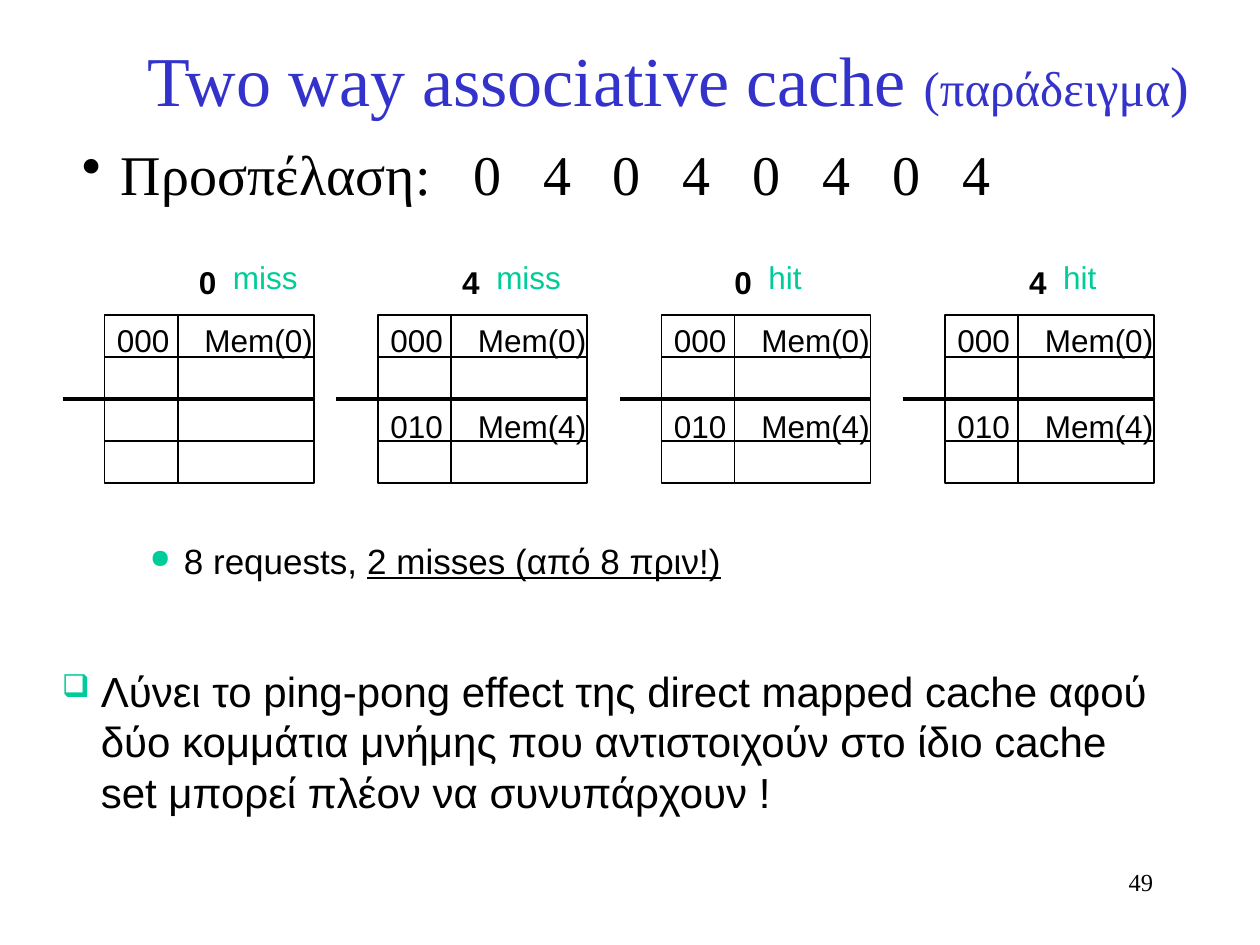
from dataclasses import dataclass
from typing import Optional

from lxml.etree import SubElement
from pptx import Presentation
from pptx.dml.color import RGBColor
from pptx.enum.shapes import MSO_CONNECTOR as CONN, MSO_SHAPE as SHAPE
from pptx.enum.text import MSO_ANCHOR as ANCHOR, MSO_AUTO_SIZE as FIT, PP_ALIGN as ALIGN
from pptx.oxml.ns import qn
from pptx.util import Inches, Pt

BLACK = RGBColor(0x00, 0x00, 0x00)
BLUE = RGBColor(0x33, 0x33, 0xCC)
GREEN = RGBColor(0x00, 0xCC, 0x99)
SERIF, SANS = "Times New Roman", "Arial"

TABLE_TOP, ROW_H, ROWS = 2.5, 1 / 3, 4
TAG_W, DATA_W, OVERHANG = 0.58, 1.08, 0.33
LABEL_H = 0.4


@dataclass
class Run:
    text: str
    size: float
    font: str = SANS
    color: RGBColor = BLACK
    bold: bool = False
    underline: bool = False
    spacing: int = 0


@dataclass
class Bullet:
    char: str
    margin: float
    hang: float
    before: int
    level: int = 0
    color: Optional[RGBColor] = None


@dataclass
class Access:
    left: float
    label_left: float
    address: str
    outcome: str
    outcome_w: float
    second_set: bool = True


ACCESSES = [
    Access(0.83, 1.48, "0", "miss", 0.72, second_set=False),
    Access(3, 3.57, "4", "miss", 0.72),
    Access(5.25, 5.73, "0", "hit", 0.47),
    Access(7.5, 8.07, "4", "hit", 0.47),
]


def add_text(s, left: float, top: float, width: float, height: float,
             runs: list[Run], wrap: bool = False, align=None):
    sp = s.shapes.add_textbox(Inches(left), Inches(top), Inches(width), Inches(height))
    tf = sp.text_frame
    tf.word_wrap = wrap
    tf.auto_size = FIT.SHAPE_TO_FIT_TEXT
    p = tf.paragraphs[0]
    p.alignment = align
    for run in runs:
        r = p.add_run()
        r.text = run.text
        r.font.size = Pt(run.size)
        r.font.name = run.font
        r.font.color.rgb = run.color
        r.font.bold = run.bold
        r.font.underline = run.underline
        if run.spacing:
            r.font._element.set("spc", str(run.spacing * 100))
    return tf


def add_bullet(s, left: float, top: float, height: float,
               runs: list[Run], bullet: Bullet) -> None:
    tf = add_text(s, left, top, 8.92, height, runs, wrap=True)
    tf.margin_left = tf.margin_right = Inches(0.07)
    tf.margin_top = tf.margin_bottom = Inches(0.03)
    p = tf.paragraphs[0]
    p.level = bullet.level
    pPr = p._p.get_or_add_pPr()
    pPr.set("marL", str(Inches(bullet.margin)))
    pPr.set("indent", str(-Inches(bullet.hang)))
    before = SubElement(pPr, qn("a:spcBef"))
    SubElement(before, qn("a:spcPct"), val=str(bullet.before * 1000))
    if bullet.color is not None:
        color = SubElement(pPr, qn("a:buClr"))
        SubElement(color, qn("a:srgbClr"), val=str(bullet.color))
        SubElement(pPr, qn("a:buSzPct"), val="75000")
    SubElement(pPr, qn("a:buChar"), char=bullet.char)


def add_line(s, x1: float, x2: float, y: float, weight: float = 1):
    line = s.shapes.add_connector(CONN.STRAIGHT, Inches(x1), Inches(y), Inches(x2), Inches(y))
    line.line.color.rgb = BLACK
    line.line.width = Pt(weight)
    SubElement(line._element.spPr, qn("a:effectLst"))
    return line


def add_column(s, left: float, width: float):
    sp = s.shapes.add_shape(SHAPE.RECTANGLE, Inches(left), Inches(TABLE_TOP),
                            Inches(width), Inches(ROWS * ROW_H))
    sp.shadow.inherit = False
    sp.fill.background()
    sp.line.color.rgb = BLACK
    sp.line.width = Pt(1)
    for row in range(1, ROWS):
        line = add_line(s, left, left + width, TABLE_TOP + row * ROW_H)
        if row == ROWS // 2:
            line.begin_connect(sp, 1)
            line.end_connect(sp, 3)
    return sp


def add_entry(s, left: float, top: float, tag: str, data: str) -> None:
    runs = [Run(tag, 18), Run(" ", 18, spacing=15), Run(data, 18)]
    add_text(s, left, top, 1.76, LABEL_H, runs)


def add_access(s, access: Access) -> None:
    left = access.left
    add_column(s, left, TAG_W)
    data = add_column(s, left + TAG_W, DATA_W)
    middle = TABLE_TOP + ROWS / 2 * ROW_H
    divider = add_line(s, left - OVERHANG, left + TAG_W + DATA_W, middle, 2.25)
    divider.end_connect(data, 3)
    add_text(s, access.label_left, 2.04, 0.34, LABEL_H, [Run(access.address, 18, bold=True)])
    add_text(s, access.label_left + 0.27, 2, access.outcome_w, LABEL_H,
             [Run(access.outcome, 18, color=GREEN)])
    add_entry(s, left, TABLE_TOP, "000", "Mem(0)")
    if access.second_set:
        add_entry(s, left, 3.18, "010", "Mem(4)")


def main() -> None:
    prs = Presentation()
    prs.slide_width, prs.slide_height = Inches(10), Inches(7.5)
    s = prs.slides.add_slide(prs.slide_layouts[6])

    title = add_text(s, 0.75, 0, 9.25, 1.25, [
        Run("Two way associative cache ", 40, SERIF, BLUE),
        Run("(παράδειγμα", 28, SERIF, BLUE),
        Run(")", 32, SERIF, BLUE),
        Run(" ", 40, SERIF, BLUE),
    ], wrap=True, align=ALIGN.CENTER)
    title.auto_size = FIT.NONE
    title.vertical_anchor = ANCHOR.MIDDLE

    add_bullet(s, 0.58, 1.08, 0.59, [
        Run("Προσπέλαση", 32, SERIF),
        Run(": 0 4 0 4 0 4 0 4", 32, SERIF, spacing=8),
    ], Bullet("•", 0.31, 0.31, 20))

    for access in ACCESSES:
        add_access(s, access)

    add_bullet(s, 0.58, 4.25, 0.39, [
        Run("8 requests, ", 20),
        Run("2 misses (από 8 πριν!)", 20, underline=True),
    ], Bullet("●", 0.81, 0.27, 30, level=1, color=GREEN))
    add_bullet(s, 0.42, 5.25, 1.25, [
        Run("Λύνει το ping-pong effect της direct mapped cache αφού δύο κομμάτια μνήμης "
            "που αντιστοιχούν στο ίδιο cache set μπορεί πλέον να συνυπάρχουν !", 24),
    ], Bullet("❑", 0.31, 0.31, 30, color=GREEN))
    add_text(s, 7.17, 6.83, 2.08, 0.5, [Run("49", 14, SERIF)], wrap=True, align=ALIGN.RIGHT)

    prs.save("out.pptx")


if __name__ == "__main__":
    main()
